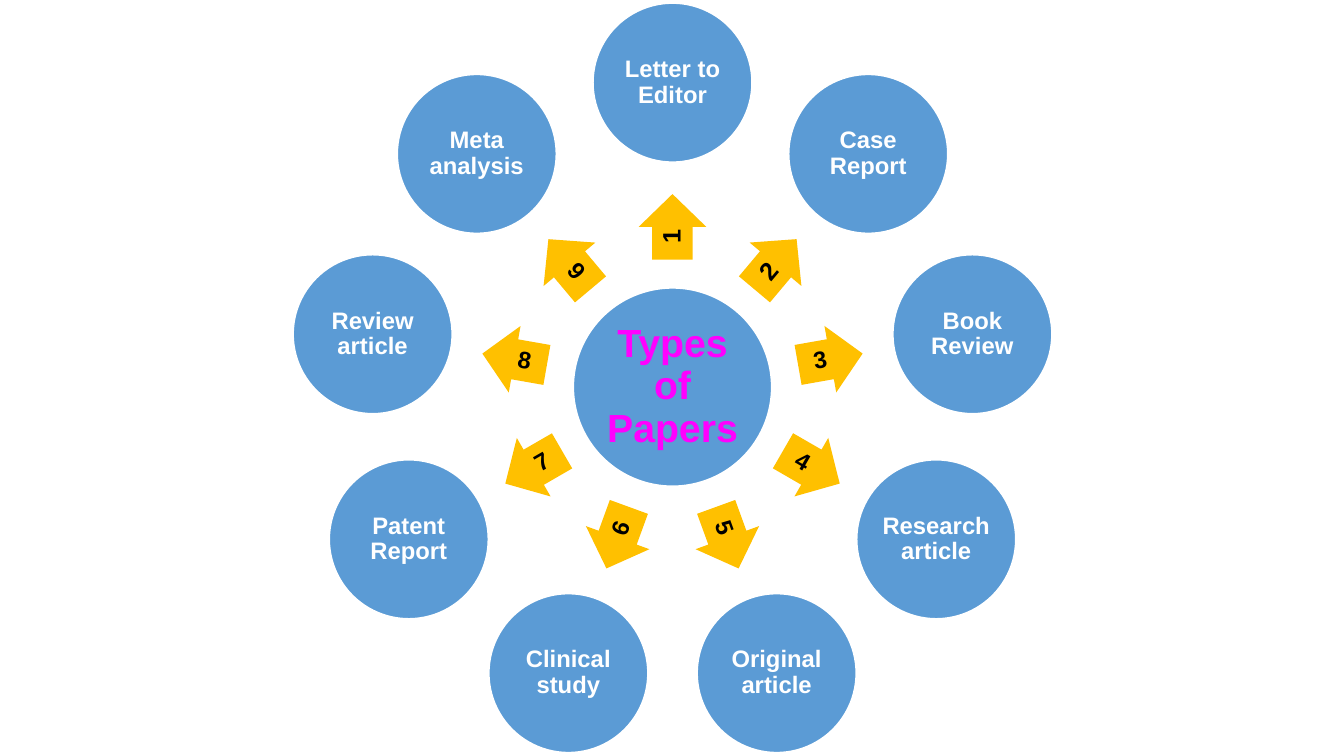
from dataclasses import dataclass
from math import cos, radians, sin

from pptx import Presentation
from pptx.dml.color import RGBColor
from pptx.enum.shapes import MSO_SHAPE
from pptx.enum.text import MSO_ANCHOR, MSO_AUTO_SIZE, PP_ALIGN
from pptx.shapes.autoshape import Shape
from pptx.slide import Slide
from pptx.util import Inches, Pt


@dataclass(frozen=True)
class Theme:
    font: str = "Arial"
    circle: str = "5B9BD5"
    arrow: str = "FFC000"
    title: str = "FF00FF"
    white: str = "FFFFFF"
    number: str = "000000"
    title_size: float = 28
    label_size: float = 17
    large_number_size: float = 18
    number_size: float = 17


@dataclass(frozen=True)
class PaperType:
    label: str
    number_size: float


@dataclass(frozen=True)
class Box:
    x: float
    y: float
    width: float
    height: float

    def bounds(self) -> tuple:
        """Left, top, width and height of a box described by its centre."""
        return (Inches(self.x - self.width / 2), Inches(self.y - self.height / 2),
                Inches(self.width), Inches(self.height))


THEME = Theme()
CENTRE_X, CENTRE_Y = 6.67, 3.84
CIRCLE_RADIUS, ARROW_RADIUS, NUMBER_RADIUS = 3.02, 1.59, 1.49
HUB_SIZE, CIRCLE_SIZE = 1.98, 1.59

PAPER_TYPES = [
    PaperType("Letter to Editor", THEME.large_number_size),
    PaperType("Case Report", THEME.large_number_size),
    PaperType("Book Review", THEME.number_size),
    PaperType("Research article", THEME.number_size),
    PaperType("Original article", THEME.number_size),
    PaperType("Clinical study", THEME.number_size),
    PaperType("Patent Report", THEME.number_size),
    PaperType("Review article", THEME.number_size),
    PaperType("Meta analysis", THEME.number_size),
]


def box_on_ring(radius: float, angle: float, width: float, height: float) -> Box:
    """Place a box around the hub, with the angle in degrees clockwise from the right."""
    return Box(CENTRE_X + radius * cos(radians(angle)),
               CENTRE_Y + radius * sin(radians(angle)), width, height)


def write_text(shape: Shape, text: str, *, size: float, color: str, inset: float = 0) -> None:
    frame = shape.text_frame
    frame.auto_size = MSO_AUTO_SIZE.NONE
    frame.word_wrap = True
    frame.vertical_anchor = MSO_ANCHOR.MIDDLE
    frame.margin_left = frame.margin_right = Inches(inset)
    frame.margin_top = frame.margin_bottom = Inches(inset)
    para = frame.paragraphs[0]
    para.alignment = PP_ALIGN.CENTER
    para.line_spacing = 0.9
    span = para.add_run()
    span.text = text
    span.font.name = THEME.font
    span.font.size = Pt(size)
    span.font.bold = True
    span.font.color.rgb = RGBColor.from_string(color)


def add_circle(page: Slide, box: Box) -> Shape:
    circle = page.shapes.add_shape(MSO_SHAPE.OVAL, *box.bounds())
    circle.shadow.inherit = False
    circle.fill.solid()
    circle.fill.fore_color.rgb = RGBColor.from_string(THEME.circle)
    circle.line.color.rgb = RGBColor.from_string(THEME.white)
    circle.line.width = Pt(2)
    return circle


def add_arrow(page: Slide, angle: float) -> None:
    box = box_on_ring(ARROW_RADIUS, angle, 0.65, 0.67)
    arrow = page.shapes.add_shape(MSO_SHAPE.RIGHT_ARROW, *box.bounds())
    arrow.adjustments[0] = 0.6
    arrow.adjustments[1] = 0.5
    arrow.rotation = angle
    arrow.shadow.inherit = False
    arrow.fill.solid()
    arrow.fill.fore_color.rgb = RGBColor.from_string(THEME.arrow)
    arrow.line.fill.background()


def add_number(page: Slide, number: int, angle: float, size: float) -> None:
    """Write the number along its arrow, turned over where the arrow points left."""
    box = box_on_ring(NUMBER_RADIUS, angle, 0.46, 0.4)
    number_box = page.shapes.add_textbox(*box.bounds())
    number_box.rotation = angle + 180 if 90 < angle < 270 else angle
    write_text(number_box, str(number), size=size, color=THEME.number)


def add_hub(page: Slide) -> None:
    hub = add_circle(page, Box(CENTRE_X, CENTRE_Y, HUB_SIZE, HUB_SIZE))
    title = page.shapes.title
    title.left, title.top, title.width, title.height = Box(CENTRE_X, CENTRE_Y, 1.4, 1.4).bounds()
    write_text(title, "Types of Papers", size=THEME.title_size, color=THEME.title, inset=0.04)
    title.element.addprevious(hub.element)


def add_spoke(page: Slide, index: int, paper: PaperType) -> None:
    angle = (270 + index * 360 / len(PAPER_TYPES)) % 360
    add_arrow(page, angle)
    add_number(page, index + 1, angle, paper.number_size)
    circle = add_circle(page, box_on_ring(CIRCLE_RADIUS, angle, CIRCLE_SIZE, CIRCLE_SIZE))
    write_text(circle, paper.label, size=THEME.label_size, color=THEME.white, inset=0.02)


def main() -> None:
    deck = Presentation()
    deck.slide_width, deck.slide_height = Inches(13.33), Inches(7.5)
    page = deck.slides.add_slide(deck.slide_layouts.get_by_name("Title Only"))
    add_hub(page)
    for index, paper in enumerate(PAPER_TYPES):
        add_spoke(page, index, paper)
    deck.save("out.pptx")


if __name__ == "__main__":
    main()
